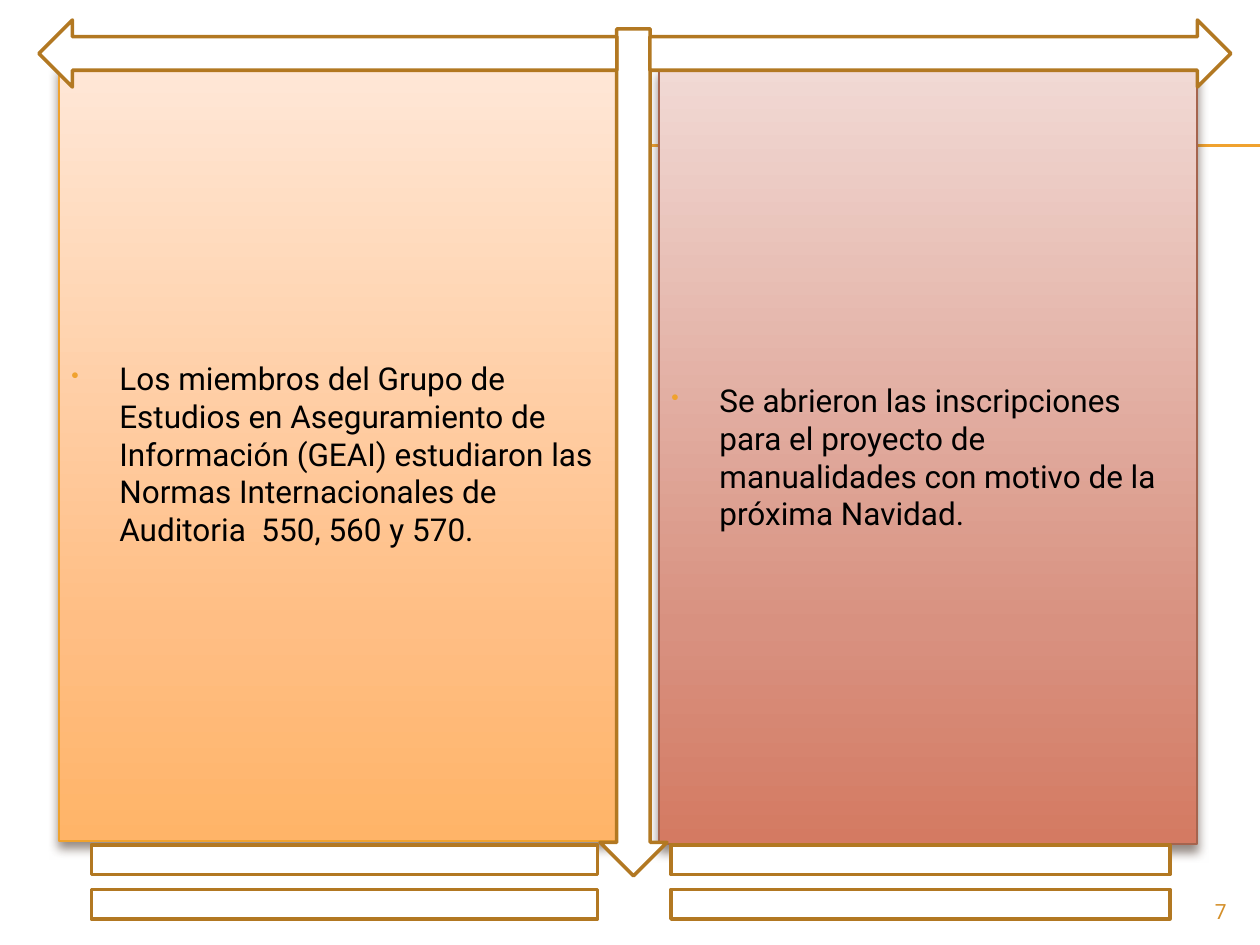
from copy import deepcopy
from dataclasses import dataclass

from lxml import etree
from pptx import Presentation
from pptx import util as u
from pptx.dml.color import RGBColor
from pptx.enum import shapes, text
from pptx.oxml import parse_xml
from pptx.oxml.ns import nsdecls, qn

PX_PER_INCH = 126
FONT = "Roboto"
WHITE = RGBColor(0xFF, 0xFF, 0xFF)
BLACK = RGBColor(0, 0, 0)
AMBER = RGBColor(0xF0, 0xA2, 0x2E)
BROWN = RGBColor(0xB2, 0x78, 0x22)
RUST = RGBColor(0xA5, 0x64, 0x4E)
GOLD = RGBColor(0xD4, 0x8F, 0x29)
SHADOW = RGBColor(0x4E, 0x3B, 0x30)
PEACH_STOPS = (RGBColor(0xFF, 0xE7, 0xD7), RGBColor(0xFF, 0xBE, 0x84), RGBColor(0xFF, 0xB4, 0x68))
ROSE_STOPS = (RGBColor(0xF1, 0xD9, 0xD4), RGBColor(0xD8, 0x91, 0x80), RGBColor(0xD4, 0x7A, 0x62))
STOP_POSITIONS = (0, 0.72, 1)


@dataclass(frozen=True)
class Box:
    x: int
    y: int
    w: int
    h: int


@dataclass(frozen=True)
class Panel:
    box: Box
    stops: tuple[RGBColor, ...]
    border: RGBColor
    body: str


@dataclass(frozen=True)
class Outline:
    kind: shapes.MSO_SHAPE
    box: Box


PANELS = (
    Panel(Box(59, 66, 557, 775), PEACH_STOPS, AMBER,
          "Los miembros del Grupo de Estudios en Aseguramiento de Información (GEAI) "
          "estudiaron las Normas Internacionales de Auditoria  550, 560 y 570."),
    Panel(Box(659, 69, 538, 775), ROSE_STOPS, RUST,
          "Se abrieron las inscripciones para el proyecto de manualidades con motivo "
          "de la próxima Navidad."),
)
OUTLINES = (
    Outline(shapes.MSO_SHAPE.DOWN_ARROW, Box(600, 29, 67, 847)),
    Outline(shapes.MSO_SHAPE.RIGHT_ARROW, Box(650, 20, 581, 67)),
    Outline(shapes.MSO_SHAPE.LEFT_ARROW, Box(39, 20, 578, 67)),
    Outline(shapes.MSO_SHAPE.MATH_EQUAL, Box(0, 819, 689, 126)),
    Outline(shapes.MSO_SHAPE.MATH_EQUAL, Box(581, 819, 679, 126)),
)


def px(n: int) -> u.Emu:
    return u.Emu(round(n * 914400 / PX_PER_INCH))


def place(box: Box) -> tuple[u.Emu, ...]:
    return px(box.x), px(box.y), px(box.w), px(box.h)


def add_run(p, content: str, size: int, color: RGBColor) -> None:
    r = p.add_run()
    r.text = content
    r.font.name = FONT
    r.font.size = u.Pt(size)
    r.font.color.rgb = color


def add_rule(s, y: int) -> None:
    line = s.shapes.add_connector(shapes.MSO_CONNECTOR.STRAIGHT, px(71), px(y), px(1260), px(y))
    line.line.color.rgb = AMBER
    line.line.width = u.Pt(0.75)
    etree.SubElement(line._element.spPr, qn("a:effectLst"))


def add_shape(s, kind: shapes.MSO_SHAPE, box: Box, border: RGBColor, width: float):
    sp = s.shapes.add_shape(kind, *place(box))
    sp.shadow.inherit = False
    sp.line.color.rgb = border
    sp.line.width = u.Pt(width)
    return sp


def fill_gradient(sp, colors: tuple[RGBColor, ...]) -> None:
    """Fill from top to bottom with one colour per stop position."""
    sp.fill.gradient()
    sp.fill.gradient_angle = 270
    stop_list = sp._element.spPr.find(".//" + qn("a:gsLst"))
    stop_list.append(deepcopy(stop_list[-1]))
    for stop, color, position in zip(sp.fill.gradient_stops, colors, STOP_POSITIONS):
        stop.color.rgb = color
        stop.position = position


def add_drop_shadow(sp) -> None:
    sp._element.spPr.find(qn("a:effectLst")).append(parse_xml(
        f'<a:outerShdw {nsdecls("a")} blurRad="{u.Pt(6)}" dist="{u.Pt(4)}" dir="5400000" '
        f'rotWithShape="0"><a:srgbClr val="{SHADOW}"><a:alpha val="60000"/></a:srgbClr>'
        '</a:outerShdw>'))


def add_bullet(p) -> None:
    pPr = p._p.get_or_add_pPr()
    pPr.set("marL", str(px(48)))
    pPr.set("indent", str(-px(48)))
    for xml in (f'<a:buClr {nsdecls("a")}><a:srgbClr val="{AMBER}"/></a:buClr>',
                f'<a:buSzPct {nsdecls("a")} val="70000"/>',
                f'<a:buChar {nsdecls("a")} char="•"/>'):
        pPr.append(parse_xml(xml))


def add_panel(s, panel: Panel) -> None:
    sp = add_shape(s, shapes.MSO_SHAPE.RECTANGLE, panel.box, panel.border, 0.79)
    fill_gradient(sp, panel.stops)
    add_drop_shadow(sp)
    tf = sp.text_frame
    tf.word_wrap = True
    tf.vertical_anchor = text.MSO_ANCHOR.MIDDLE
    p = tf.paragraphs[0]
    p.alignment = text.PP_ALIGN.LEFT
    p.space_before = u.Pt(4)
    add_bullet(p)
    add_run(p, panel.body, 18, BLACK)


def add_outline(s, outline: Outline) -> None:
    sp = add_shape(s, outline.kind, outline.box, BROWN, 2)
    sp.fill.solid()
    sp.fill.fore_color.rgb = WHITE


def add_page_number(s, number: str) -> None:
    tf = s.shapes.add_textbox(*place(Box(1134, 892, 105, 34))).text_frame
    tf.word_wrap = True
    p = tf.paragraphs[0]
    p.alignment = text.PP_ALIGN.RIGHT
    add_run(p, number, 12, GOLD)


def main() -> None:
    prs = Presentation()
    prs.slide_width, prs.slide_height = px(1260), px(945)
    s = prs.slides.add_slide(prs.slide_layouts[6])
    for y in (145, 146):
        add_rule(s, y)
    for panel in PANELS:
        add_panel(s, panel)
    for outline in OUTLINES:
        add_outline(s, outline)
    add_page_number(s, "7")
    prs.save("out.pptx")


if __name__ == "__main__":
    main()
